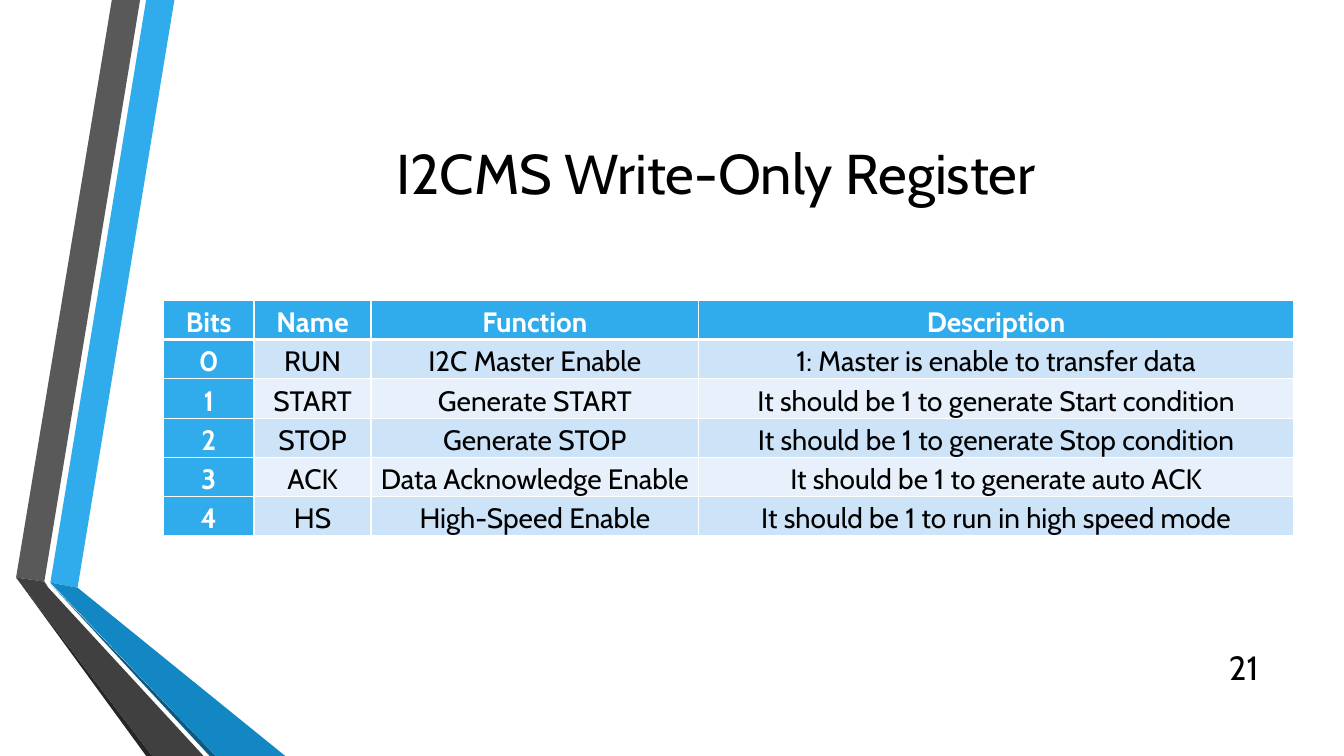
from dataclasses import dataclass

from lxml import etree
from pptx import Presentation
from pptx.dml.color import RGBColor
from pptx.enum.text import MSO_ANCHOR, PP_ALIGN
from pptx.oxml.ns import qn
from pptx.slide import Slide
from pptx.table import _Cell
from pptx.text.text import TextFrame
from pptx.util import Inches, Pt

CENTER, RIGHT = PP_ALIGN.CENTER, PP_ALIGN.RIGHT
TOP, MIDDLE = MSO_ANCHOR.TOP, MSO_ANCHOR.MIDDLE
TITLE_ONLY_LAYOUT = 5


@dataclass(frozen=True)
class Theme:
    font: str = "Cabin"
    title_size: float = 40
    number_size: float = 24
    table_size: float = 20
    black: str = "000000"
    white: str = "FFFFFF"
    blue: str = "30ACEC"
    blue_shade: str = "1287C3"
    blue_edge: str = "0C5A82"
    gray: str = "595959"
    gray_shade: str = "404040"
    gray_edge: str = "262626"
    band_odd: str = "CDE3F8"
    band_even: str = "E8F1FB"


@dataclass(frozen=True)
class Ribbon:
    color: str
    points: tuple[tuple[float, float], ...]


@dataclass(frozen=True)
class TextStyle:
    size: float
    color: str
    align: PP_ALIGN = CENTER
    bold: bool = False
    line_spacing: float = 1.0


@dataclass(frozen=True)
class RegisterBit:
    bit: str
    name: str
    function: str
    description: str


THEME = Theme()

RIBBONS = (
    Ribbon(THEME.blue, ((0.5, 5.78), (0.77, 5.83), (1.73, 0), (1.45, 0))),
    Ribbon(THEME.gray, ((1.39, 0), (1.11, 0), (0.16, 5.73), (0.44, 5.77))),
    Ribbon(THEME.gray_edge, ((0.16, 5.73), (1.45, 7.5), (1.51, 7.5))),
    Ribbon(THEME.blue_edge, ((0.5, 5.79), (2.08, 7.5), (2.14, 7.5))),
    Ribbon(THEME.blue_shade, ((0.5, 5.78), (2.14, 7.5), (2.83, 7.5), (0.77, 5.83))),
    Ribbon(THEME.gray_shade, ((2.02, 7.5), (0.48, 5.83), (0.44, 5.77), (0.16, 5.73), (1.51, 7.5))),
)

HEADER = RegisterBit("Bits", "Name", "Function", "Description")
REGISTER_BITS = (
    RegisterBit("0", "RUN", "I2C Master Enable", "1: Master is enable to transfer data"),
    RegisterBit("1", "START", "Generate START", "It should be 1 to generate Start condition"),
    RegisterBit("2", "STOP", "Generate STOP", "It should be 1 to generate Stop condition"),
    RegisterBit("3", "ACK", "Data Acknowledge Enable", "It should be 1 to generate auto ACK"),
    RegisterBit("4", "HS", "High-Speed Enable", "It should be 1 to run in high speed mode"),
)
COLUMN_WIDTHS = (0.9, 1.16, 3.25, 5.9)
ROW_HEIGHT = 0.38


def write_text(frame: TextFrame, text: str, style: TextStyle) -> None:
    para = frame.paragraphs[0]
    para.alignment = style.align
    para.line_spacing = style.line_spacing
    span = para.add_run()
    span.text = text
    span.font.name = THEME.font
    span.font.size = Pt(style.size)
    span.font.bold = style.bold
    span.font.color.rgb = RGBColor.from_string(style.color)


def draw_ribbon(page: Slide, ribbon: Ribbon) -> None:
    start, *rest = [(Inches(x), Inches(y)) for x, y in ribbon.points]
    builder = page.shapes.build_freeform(*start)
    builder.add_line_segments(rest, close=True)
    shape = builder.convert_to_shape()
    shape.shadow.inherit = False
    shape.fill.solid()
    shape.fill.fore_color.rgb = RGBColor.from_string(ribbon.color)
    shape.line.fill.background()


def set_borders(cell: _Cell, widths: dict[str, float]) -> None:
    properties = cell._tc.get_or_add_tcPr()
    for index, (side, width) in enumerate(widths.items()):
        line = etree.Element(qn(f"a:ln{side}"), w=str(Pt(width)))
        fill = etree.SubElement(line, qn("a:solidFill"))
        etree.SubElement(fill, qn("a:srgbClr"), val=THEME.white)
        properties.insert(index, line)


def fill_cell(cell: _Cell, text: str, row: int, column: int) -> None:
    heading = row == 0 or column == 0
    band = THEME.band_odd if row % 2 else THEME.band_even
    cell.margin_left = cell.margin_right = Inches(0.07)
    cell.margin_top = cell.margin_bottom = 0
    cell.vertical_anchor = TOP
    cell.fill.solid()
    cell.fill.fore_color.rgb = RGBColor.from_string(THEME.blue if heading else band)
    above, below = {0: (1, 3), 1: (3, 1)}.get(row, (1, 1))
    set_borders(cell, {"L": 1, "R": 1, "T": above, "B": below})
    color = THEME.white if heading else THEME.black
    style = TextStyle(THEME.table_size, color, bold=heading, line_spacing=1.15)
    write_text(cell.text_frame, text, style)


def draw_register_table(page: Slide) -> None:
    records = (HEADER, *REGISTER_BITS)
    table = page.shapes.add_table(
        len(records), len(COLUMN_WIDTHS), Inches(1.62), Inches(2.98),
        Inches(sum(COLUMN_WIDTHS)), Inches(ROW_HEIGHT * len(records)),
    ).table
    table.first_col = True
    for column, width in zip(table.columns, COLUMN_WIDTHS):
        column.width = Inches(width)
    for row, record in enumerate(records):
        texts = (record.bit, record.name, record.function, record.description)
        for column, text in enumerate(texts):
            fill_cell(table.cell(row, column), text, row, column)


def draw_title(page: Slide, text: str) -> None:
    title = page.shapes.title
    title.left, title.top = Inches(1.62), Inches(0.75)
    title.width, title.height = Inches(10.96), Inches(1.92)
    title.text_frame.vertical_anchor = MIDDLE
    write_text(title.text_frame, text, TextStyle(THEME.title_size, THEME.black))


def draw_page_number(page: Slide, text: str) -> None:
    box = page.shapes.add_textbox(Inches(11.98), Inches(6.42), Inches(0.6), Inches(0.4))
    box.text_frame.word_wrap = True
    box.text_frame.vertical_anchor = MIDDLE
    write_text(box.text_frame, text, TextStyle(THEME.number_size, THEME.black, RIGHT))


def main() -> None:
    deck = Presentation()
    deck.slide_width, deck.slide_height = Inches(13.33), Inches(7.5)
    page = deck.slides.add_slide(deck.slide_layouts[TITLE_ONLY_LAYOUT])

    # Folded ribbons on the left edge
    for ribbon in RIBBONS:
        draw_ribbon(page, ribbon)

    # Title, register table and page number
    draw_title(page, "I2CMS Write-Only Register")
    draw_register_table(page)
    draw_page_number(page, "21")

    deck.save("out.pptx")


if __name__ == "__main__":
    main()
